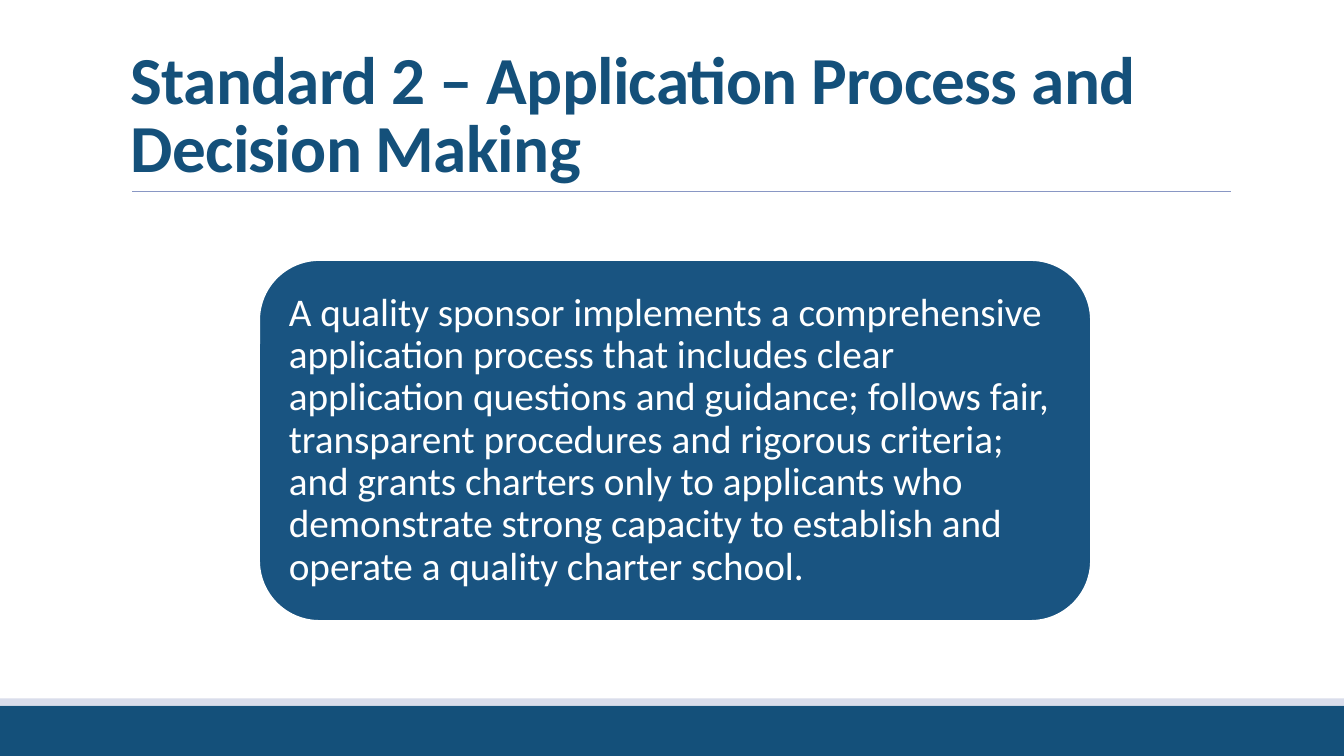
from dataclasses import dataclass

from lxml.etree import SubElement
from pptx import Presentation
from pptx.dml.color import RGBColor
from pptx.enum.shapes import MSO_CONNECTOR, MSO_SHAPE
from pptx.enum.text import MSO_ANCHOR, PP_ALIGN
from pptx.oxml.ns import qn
from pptx.util import Inches, Pt


@dataclass(frozen=True)
class Theme:
    font: str = "Calibri"
    navy: str = "14507A"
    pale: str = "D9DDEB"
    rule: str = "8997C4"
    card: str = "195481"
    white: str = "FFFFFF"
    title_size: int = 48
    body_size: int = 28


THEME = Theme()
SLIDE_WIDTH, SLIDE_HEIGHT = 13.33, 7.5

TITLE = "Standard 2 – Application Process and Decision Making"
STANDARD = (
    "A quality sponsor implements a comprehensive application process that "
    "includes clear application questions and guidance; follows fair, "
    "transparent procedures and rigorous criteria; and grants charters only "
    "to applicants who demonstrate strong capacity to establish and operate "
    "a quality charter school."
)


def add_block(slide, preset, box, color):
    block = slide.shapes.add_shape(preset, *map(Inches, box))
    block.shadow.inherit = False
    block.fill.solid()
    block.fill.fore_color.rgb = RGBColor.from_string(color)
    block.line.fill.background()
    return block


def add_words(slide, box, words, size, color, anchor, spacing, margins):
    """Add a one-paragraph text box; margins are horizontal and vertical."""
    frame = slide.shapes.add_textbox(*map(Inches, box)).text_frame
    frame.word_wrap = True
    frame.vertical_anchor = anchor
    frame.margin_left = frame.margin_right = Inches(margins[0])
    frame.margin_top = frame.margin_bottom = Inches(margins[1])
    paragraph = frame.paragraphs[0]
    paragraph.text = words
    paragraph.alignment = PP_ALIGN.LEFT
    paragraph.line_spacing = spacing
    paragraph.font.name = THEME.font
    paragraph.font.size = Pt(size)
    paragraph.font.color.rgb = RGBColor.from_string(color)
    return paragraph


def add_footer(slide, left, top, width, height):
    # Pale strip above the navy band
    strip = 0.07
    add_block(slide, MSO_SHAPE.RECTANGLE,
              (left, top + strip, width, height - strip), THEME.navy)
    add_block(slide, MSO_SHAPE.RECTANGLE, (left, top, width, strip), THEME.pale)


def add_title(slide, left, top, width, height):
    # Rule under the heading
    bottom = top + height
    rule = slide.shapes.add_connector(
        MSO_CONNECTOR.STRAIGHT,
        Inches(left + 0.11), Inches(bottom),
        Inches(left + width + 0.01), Inches(bottom))
    rule.line.color.rgb = RGBColor.from_string(THEME.rule)
    rule.line.width = Pt(0.5)
    SubElement(rule._element.spPr, qn("a:effectLst"))

    # Heading, slightly tightened
    heading = add_words(slide, (left, top, width, height), TITLE,
                        THEME.title_size, THEME.navy,
                        MSO_ANCHOR.BOTTOM, 0.85, (0.1, 0.05))
    heading.font.bold = True
    heading.runs[0].font._element.set("spc", "-50")


def add_standard_card(slide, left, top, width, height):
    # Rounded panel
    panel = add_block(slide, MSO_SHAPE.ROUNDED_RECTANGLE,
                      (left, top, width, height), THEME.card)
    panel.line.color.rgb = RGBColor.from_string(THEME.white)
    panel.line.width = Pt(1.25)

    # Statement inside the panel's rounded corners
    inset = 0.175
    add_words(slide,
              (left + inset, top + inset, width - 2 * inset, height - 2 * inset),
              STANDARD, THEME.body_size, THEME.white,
              MSO_ANCHOR.MIDDLE, 0.9, (0.12, 0.12))


def main():
    deck = Presentation()
    deck.slide_width = Inches(SLIDE_WIDTH)
    deck.slide_height = Inches(SLIDE_HEIGHT)
    slide = deck.slides.add_slide(deck.slide_layouts[6])
    slide.background.fill.solid()
    slide.background.fill.fore_color.rgb = RGBColor.from_string(THEME.white)

    add_footer(slide, 0, 6.93, SLIDE_WIDTH, 0.57)
    add_title(slide, 1.2, 0.31, 11, 1.59)
    add_standard_card(slide, 2.57, 2.58, 8.25, 3.58)
    deck.save("out.pptx")


if __name__ == "__main__":
    main()
